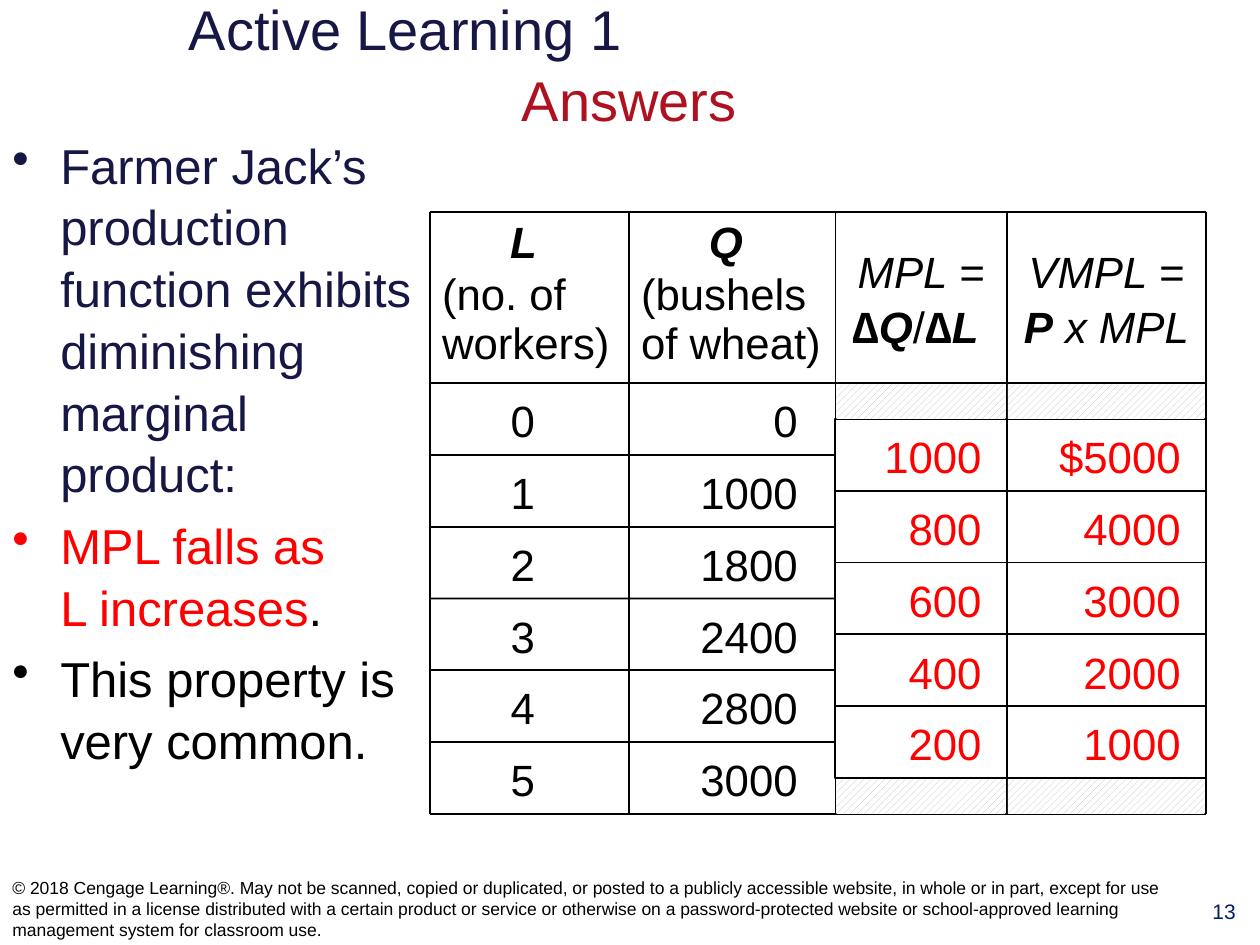
from dataclasses import dataclass

import lxml.etree
import pptx
import pptx.dml.color
import pptx.enum.dml
import pptx.enum.shapes
import pptx.enum.text
import pptx.oxml.ns
import pptx.util

ALIGN = pptx.enum.text.PP_ALIGN
ANCHOR = pptx.enum.text.MSO_ANCHOR
BLACK, WHITE, NAVY, RED = "000000", "FFFFFF", "171745", "FF0000"

# Grid: column edges, header top, first data row, row height (inches)
COLUMNS = (3.41, 4.99, 6.63, 7.99, 9.57)
HEADER_TOP, DATA_TOP, ROW_HEIGHT, ROW_COUNT = 1.68, 3.04, 0.57, 6
HEADER_HEIGHT = DATA_TOP - HEADER_TOP
DATA_BOTTOM = DATA_TOP + ROW_COUNT * ROW_HEIGHT


@dataclass
class Run:
    text: str
    color: str = BLACK
    bold: bool = False
    italic: bool = False


@dataclass
class Line:
    runs: list[Run]
    align: ALIGN = ALIGN.LEFT
    spacing: float = 1.0
    before: float = 0
    left_margin: float = 0
    bullet: bool = False


@dataclass
class ColumnValues:
    column: int
    values: tuple[str, ...]
    align: ALIGN
    right_inset: float


def color_of(value: str) -> pptx.dml.color.RGBColor:
    return pptx.dml.color.RGBColor.from_string(value)


def fill_text(shape, lines: list[Line], size: float, anchor: ANCHOR = ANCHOR.MIDDLE,
              right: float = 0.1, bottom: float = 0.05) -> None:
    frame = shape.text_frame
    frame.word_wrap = True
    frame.vertical_anchor = anchor
    frame.margin_left, frame.margin_right = pptx.util.Inches(0.1), pptx.util.Inches(right)
    frame.margin_top, frame.margin_bottom = pptx.util.Inches(0.05), pptx.util.Inches(bottom)
    for index, line in enumerate(lines):
        paragraph = frame.add_paragraph() if index else frame.paragraphs[0]
        paragraph.alignment = line.align
        paragraph.line_spacing = line.spacing
        if index and line.before:
            paragraph.space_before = pptx.util.Pt(line.before)
        properties = paragraph._p.get_or_add_pPr()
        if line.left_margin:
            properties.set("marL", str(pptx.util.Inches(line.left_margin)))
        if line.bullet:
            properties.set("indent", str(-pptx.util.Inches(line.left_margin)))
            bullet = lxml.etree.SubElement(properties, pptx.oxml.ns.qn("a:buChar"))
            bullet.set("char", "•")
        paragraph.font.name = "Arial"
        paragraph.font.size = pptx.util.Pt(size)
        for part in line.runs:
            for position, piece in enumerate(part.text.split("\n")):
                if position:
                    paragraph.add_line_break()
                run = paragraph.add_run()
                run.text = piece
                run.font.name = "Arial"
                run.font.size = pptx.util.Pt(size)
                run.font.bold, run.font.italic = part.bold, part.italic
                run.font.color.rgb = color_of(part.color)


def add_text(slide, left: float, top: float, width: float, height: float,
             lines: list[Line], size: float, **options):
    shape = slide.shapes.add_textbox(*map(pptx.util.Inches, (left, top, width, height)))
    fill_text(shape, lines, size, **options)
    return shape


def add_rectangle(slide, left: float, top: float, width: float, height: float):
    shape = slide.shapes.add_shape(
        pptx.enum.shapes.MSO_SHAPE.RECTANGLE,
        *map(pptx.util.Inches, (left, top, width, height)))
    shape.shadow.inherit = False
    return shape


def add_rule(slide, x1: float, y1: float, x2: float, y2: float):
    rule = slide.shapes.add_connector(
        pptx.enum.shapes.MSO_CONNECTOR.STRAIGHT, *map(pptx.util.Inches, (x1, y1, x2, y2)))
    rule.line.color.rgb = color_of(BLACK)
    rule.line.width = pptx.util.Pt(1)
    lxml.etree.SubElement(rule._element.spPr, pptx.oxml.ns.qn("a:effectLst"))
    return rule


def column_span(column: int) -> tuple[float, float]:
    return COLUMNS[column], COLUMNS[column + 1] - COLUMNS[column]


def add_answer(slide, column: int, row: int, value: str):
    """Place a white box half a row below the given data row."""
    left, width = column_span(column)
    box = add_rectangle(slide, left, DATA_TOP + (row + 0.5) * ROW_HEIGHT, width, ROW_HEIGHT)
    box.fill.solid()
    box.fill.fore_color.rgb = color_of(WHITE)
    box.line.color.rgb = color_of(BLACK)
    box.line.width = pptx.util.Pt(1)
    fill_text(box, [Line([Run(value, RED)], ALIGN.RIGHT, 1.05)], 25, right=0.2)
    return box


def add_hatch(slide, column: int, top: float) -> None:
    left, width = column_span(column)
    hatch = add_rectangle(slide, left + 0.01, top + 0.01, width - 0.02, ROW_HEIGHT / 2 - 0.01)
    hatch.fill.patterned()
    hatch.fill.pattern = pptx.enum.dml.MSO_PATTERN.WIDE_UPWARD_DIAGONAL
    hatch.fill.fore_color.rgb = color_of("C0C0C0")
    hatch.fill.back_color.rgb = color_of(WHITE)
    hatch.line.fill.background()


def stacked_header(symbol: str, unit: str) -> list[Line]:
    return [Line([Run(symbol, bold=True, italic=True)], ALIGN.CENTER, 0.95),
            Line([Run(unit)], spacing=0.95, before=1.25)]


def formula_header(*runs: Run) -> list[Line]:
    return [Line(list(runs), ALIGN.CENTER, 1.05)]


HEADERS = (
    stacked_header("L ", "(no. of workers)"),
    stacked_header("Q ", "(bushels of wheat)"),
    formula_header(Run("MPL = ", italic=True), Run("∆", bold=True),
                   Run("Q", bold=True, italic=True), Run("/"), Run("∆", bold=True),
                   Run("L ", bold=True, italic=True)),
    formula_header(Run("VMPL = ", italic=True), Run("P", bold=True, italic=True),
                   Run(" x MPL", italic=True)),
)
INPUTS = (
    ColumnValues(0, ("0", "1", "2", "3", "4", "5"), ALIGN.CENTER, 0.2),
    ColumnValues(1, ("0", "1000", "1800", "2400", "2800", "3000"), ALIGN.RIGHT, 0.3),
)
ANSWERS = (("1000", "$5000"), ("800", "4000"), ("600", "3000"), ("400", "2000"), ("200", "1000"))
BULLETS = (
    [Run("Farmer Jack’s production function exhibits diminishing marginal product:", NAVY)],
    [Run("MPL falls as \nL increases", RED), Run(".")],
    [Run("This property is very common.")],
)
COPYRIGHT = (
    "© 2018 Cengage Learning®. May not be scanned, copied or duplicated, or posted to a "
    "publicly accessible website, in whole or in part, except for use as permitted in a license "
    "distributed with a certain product or service or otherwise on a password-protected website "
    "or school-approved learning management system for classroom use.")


def main() -> None:
    presentation = pptx.Presentation()
    presentation.slide_width = pptx.util.Inches(10)
    presentation.slide_height = pptx.util.Inches(7.5)
    slide = presentation.slides.add_slide(presentation.slide_layouts[6])

    # Title, bullets and footer
    add_text(slide, 0.73, -0.06, 8.53, 1.1, [
        Line([Run("Active Learning 1", NAVY)], spacing=1.05, left_margin=0.67),
        Line([Run("Answers", "AE1221")], ALIGN.CENTER, 1.05)], 32)
    add_text(slide, 0, 1, 3.41, 6.05, [
        Line(runs, spacing=1.05, before=5.6, left_margin=0.38, bullet=True)
        for runs in BULLETS], 28, anchor=ANCHOR.TOP)
    add_text(slide, 9.43, 7.08, 0.57, 0.41,
             [Line([Run("13", "002060")], ALIGN.CENTER)], 12, anchor=ANCHOR.TOP)
    add_text(slide, 0, 6.92, 9.41, 0.58, [Line([Run(COPYRIGHT)])], 10)

    # Headers and given values
    for column, lines in enumerate(HEADERS):
        left, width = column_span(column)
        add_text(slide, left, HEADER_TOP, width, HEADER_HEIGHT, lines, 25,
                 bottom=0.1 if len(lines) > 1 else 0.05)
    for group in INPUTS:
        left, width = column_span(group.column)
        for row, value in enumerate(group.values):
            add_text(slide, left, DATA_TOP + row * ROW_HEIGHT, width, ROW_HEIGHT,
                     [Line([Run(value)], group.align, 1.05)], 25, right=group.right_inset)

    # Grid rules
    heights = [HEADER_TOP] + [DATA_TOP + row * ROW_HEIGHT for row in range(ROW_COUNT + 1)]
    row_rules = [add_rule(slide, COLUMNS[0], y, COLUMNS[-1], y) for y in heights]
    for x in COLUMNS:
        add_rule(slide, x, HEADER_TOP, x, DATA_BOTTOM)

    # Answers sit between rows, so each inner rule ends at a box's right side
    for row, (product, value) in enumerate(ANSWERS):
        add_answer(slide, 2, row, product)
        row_rules[row + 2].end_connect(add_answer(slide, 3, row, value), 3)
    for column in (2, 3):
        for top in (DATA_TOP, DATA_BOTTOM - ROW_HEIGHT / 2):
            add_hatch(slide, column, top)

    presentation.save("out.pptx")


if __name__ == "__main__":
    main()
